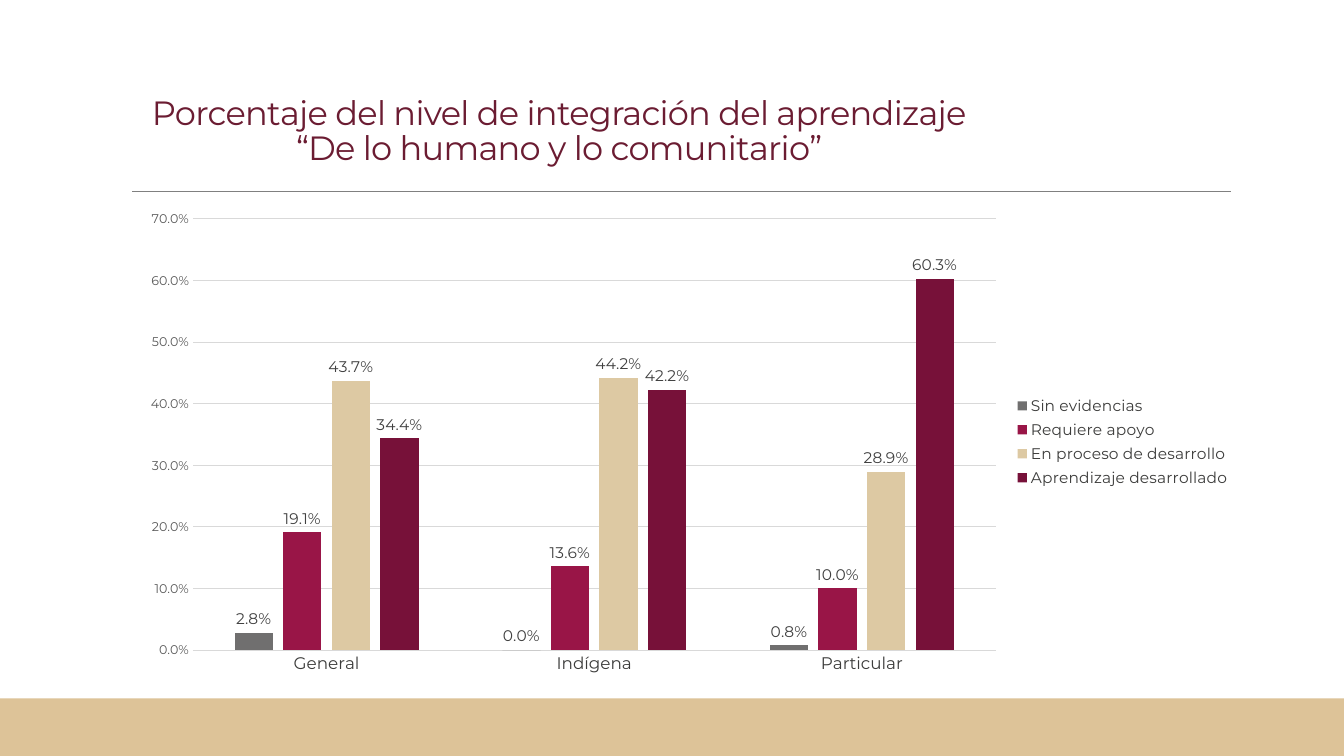
from pptx import Presentation
from pptx.chart.data import CategoryChartData as Data
from pptx.dml.color import RGBColor
from pptx.enum.chart import XL_CHART_TYPE as Kind, XL_LABEL_POSITION as Spot
from pptx.enum.chart import XL_LEGEND_POSITION as Side, XL_TICK_MARK as Tick
from pptx.enum.shapes import MSO_CONNECTOR as Link, MSO_SHAPE as Form
from pptx.enum.text import MSO_ANCHOR as Anchor, MSO_AUTO_SIZE as Fit, PP_ALIGN as Align
from pptx.oxml import parse_xml
from pptx.oxml.ns import nsdecls
from pptx.util import Inches, Pt

WINE = RGBColor(0x6B, 0x1C, 0x32)
SAND = RGBColor(0xDD, 0xC3, 0x98)
RULE = RGBColor(0x80, 0x80, 0x80)
GRID = RGBColor(0xD9, 0xD9, 0xD9)
INK = RGBColor(0x3C, 0x3C, 0x3B)
SOFT = RGBColor(0x59, 0x59, 0x59)
DARK = RGBColor(0x40, 0x40, 0x40)
BLACK = RGBColor(0, 0, 0)
GRAY = RGBColor(0x70, 0x6F, 0x6F)
BERRY = RGBColor(0x99, 0x15, 0x47)
CREAM = RGBColor(0xDD, 0xC9, 0xA3)
PLUM = RGBColor(0x77, 0x11, 0x39)

COLS, ROWS = 160, 90
FACE = "Montserrat"
PERCENT = "0.0%"
GROUPS = ("General", "Indígena", "Particular")
LEVELS = (
    ("Sin evidencias", (0.028, 0, 0.008), GRAY),
    ("Requiere apoyo", (0.191, 0.136, 0.1), BERRY),
    ("En proceso de desarrollo", (0.437, 0.442, 0.289), CREAM),
    ("Aprendizaje desarrollado", (0.344, 0.422, 0.603), PLUM),
)
PLOT = {"x": 0.06, "y": 0.04, "w": 0.72, "h": 0.89}


def put(item, **form):
    for name, value in form.items():
        setattr(item, name, value)


class Page:
    def __init__(self, deck):
        self.wide, self.high = deck.slide_width, deck.slide_height
        self.slide = deck.slides.add_slide(deck.slide_layouts[5])
        self.shapes = self.slide.shapes

    def box(self, col, row, wide, high):
        return (round(col * self.wide / COLS), round(row * self.high / ROWS),
                round(wide * self.wide / COLS), round(high * self.high / ROWS))

    def font(self, font, size, color, name=FACE):
        put(font, size=Pt(size), name=name, bold=False)
        font.color.rgb = color

    def line(self, line, color, width):
        line.color.rgb = color
        line.width = Pt(width)

    def rule(self, col, row, wide):
        x, y, w, _ = self.box(col, row, wide, 0)
        rule = self.shapes.add_connector(Link.STRAIGHT, x, y, x + w, y)
        self.line(rule.line, RULE, 0.5)
        rule._element.spPr.append(parse_xml(f"<a:effectLst {nsdecls('a')}/>"))

    def band(self, *area):
        band = self.shapes.add_shape(Form.RECTANGLE, *self.box(*area))
        band.shadow.inherit = False
        band.fill.solid()
        band.fill.fore_color.rgb = SAND
        band.line.fill.background()

    def title(self, text, *area):
        title = self.shapes.title
        spots = ("left", "top", "width", "height")
        put(title, **dict(zip(spots, self.box(*area))))
        frame = title.text_frame
        put(frame, text=text, word_wrap=True, auto_size=Fit.NONE,
            vertical_anchor=Anchor.BOTTOM)
        para = frame.paragraphs[0]
        put(para, alignment=Align.CENTER, line_spacing=0.85)
        for run in para.runs:
            self.font(run.font, 24, WINE)
            run.font._element.set("spc", "-50")

    def chart(self, *area):
        data = Data(number_format=PERCENT)
        data.categories = GROUPS
        for name, values, _ in LEVELS:
            data.add_series(name, values)
        chart = self.shapes.add_chart(
            Kind.COLUMN_CLUSTERED, *self.box(*area), data).chart
        put(chart, has_title=False, has_legend=True)
        self.font(chart.font, 10, BLACK, "Calibri")
        put(chart.legend, position=Side.RIGHT, include_in_layout=False)
        self.font(chart.legend.font, 11, INK)
        self.axes(chart)
        self.bars(chart.plots[0])
        self.frame(chart)

    def axes(self, chart):
        base, scale = chart.category_axis, chart.value_axis
        for axis, size, color in ((base, 12, INK), (scale, 9, SOFT)):
            put(axis, major_tick_mark=Tick.NONE, minor_tick_mark=Tick.NONE)
            self.font(axis.tick_labels.font, size, color)
        self.line(base.format.line, GRID, 0.75)
        put(scale, minimum_scale=0, maximum_scale=0.7, major_unit=0.1,
            has_major_gridlines=True)
        put(scale.tick_labels, number_format=PERCENT, number_format_is_linked=False)
        scale.format.line.fill.background()
        self.line(scale.major_gridlines.format.line, GRID, 0.75)

    def bars(self, plot):
        put(plot, gap_width=219, overlap=-27, vary_by_categories=False)
        for bars, (_, _, color) in zip(plot.series, LEVELS):
            bars.invert_if_negative = False
            bars.format.fill.solid()
            bars.format.fill.fore_color.rgb = color
            put(bars.data_labels, show_value=True, position=Spot.OUTSIDE_END,
                number_format=PERCENT, number_format_is_linked=False)
            self.font(bars.data_labels.font, 11, DARK)

    def frame(self, chart):
        modes = "".join(f'<c:{key}Mode val="edge"/>' for key in "xy")
        sizes = "".join(f'<c:{key} val="{part}"/>' for key, part in PLOT.items())
        area = chart._chartSpace.chart.plotArea
        for old in area.xpath("c:layout"):
            area.remove(old)
        area.insert(0, parse_xml(
            f"<c:layout {nsdecls('c')}><c:manualLayout>"
            f'<c:layoutTarget val="inner"/>{modes}{sizes}'
            "</c:manualLayout></c:layout>"))


def main():
    deck = Presentation()
    put(deck, slide_width=Inches(13.33), slide_height=Inches(7.5))
    page = Page(deck)
    page.rule(15.72, 22.8, 130.8)
    page.band(0, 83.15, COLS, 6.85)
    page.title("Porcentaje del nivel de integración del aprendizaje\v"
               "“De lo humano y lo comunitario”", 15, 8.5, 103.1, 12)
    page.chart(15, 23.75, 132.75, 57.7)
    deck.save("out.pptx")


if __name__ == "__main__":
    main()
